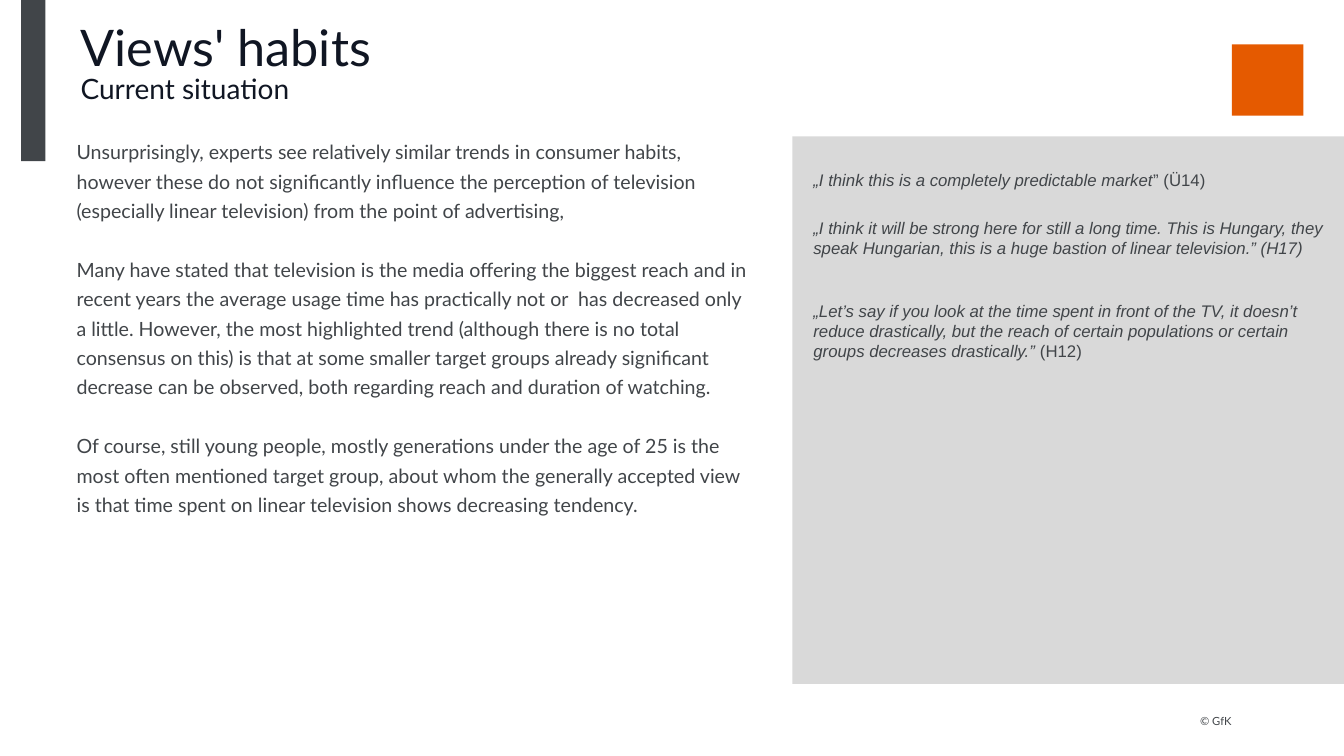
from pptx import Presentation
from pptx.dml.color import RGBColor
from pptx.enum.shapes import MSO_SHAPE as Shape
from pptx.enum.text import MSO_ANCHOR as Anchor, MSO_AUTO_SIZE as AutoSize, PP_ALIGN as Align
from pptx.oxml.ns import qn
from pptx.util import Pt

BODY = [
    "Unsurprisingly, experts see relatively similar trends in consumer habits, however these do not "
    "significantly influence the perception of television (especially linear television) from the "
    "point of advertising,",
    "Many have stated that television is the media offering the biggest reach and in recent years the "
    "average usage time has practically not or  has decreased only a little. However, the most "
    "highlighted trend (although there is no total consensus on this) is that at some smaller target "
    "groups already significant decrease can be observed, both regarding reach and duration of watching.",
    "Of course, still young people, mostly generations under the age of 25 is the most often mentioned "
    "target group, about whom the generally accepted view is that time spent on linear television shows "
    "decreasing tendency.",
]

# top, words in italics, upright ending
QUOTES = [
    (115.2, "„I think this is a completely predictable market", "” (Ü14)"),
    (149.8, "„I think it will be strong here for still a long time. This is Hungary, they speak "
            "Hungarian, this is a huge bastion of linear television.” (H17)", ""),
    (208.8, "„Let’s say if you look at the time spent in front of the TV, it doesn’t reduce drastically, "
            "but the reach of certain populations or certain groups decreases drastically.” ", "(H12)"),
]


def color(code):
    return RGBColor.from_string(code)


class SlideBuilder:
    heading_font, quote_font = "Lato", "Arial"
    ink, gray, panel, accent = "101623", "414549", "D9D9D9", "E55A00"

    def __init__(self, slide):
        self.slide = slide

    def place(self, shape, left, top, width, height):
        shape.left, shape.top = Pt(left), Pt(top)
        shape.width, shape.height = Pt(width), Pt(height)

    def prepare(self, shape, inset_top=0, anchor=Anchor.TOP):
        """Give the text frame its insets, wrapping and anchor."""
        frame = shape.text_frame
        frame.margin_left = frame.margin_right = frame.margin_bottom = 0
        frame.margin_top = Pt(inset_top)
        frame.word_wrap = True
        frame.auto_size = AutoSize.NONE
        frame.vertical_anchor = anchor
        return frame

    def style(self, paragraph, font, code, size=None, spacing=None, align=Align.LEFT):
        paragraph.alignment = align
        paragraph.line_spacing = spacing
        paragraph.font.name = font
        paragraph.font.color.rgb = color(code)
        paragraph.font.size = size and Pt(size)

    def rectangle(self, left, top, width, height, code):
        shape = self.slide.shapes.add_shape(Shape.RECTANGLE, Pt(left), Pt(top), Pt(width), Pt(height))
        shape.shadow.inherit = False
        shape.fill.solid()
        shape.fill.fore_color.rgb = color(code)
        shape.line.fill.background()

    def title(self, heading, subheading):
        shape = self.slide.shapes.title
        self.place(shape, 57.6, 18, 608.4, 38.9)
        paragraph = self.prepare(shape).paragraphs[0]
        self.style(paragraph, self.heading_font, self.ink, spacing=0.85)
        run = paragraph.add_run()
        run.text, run.font.size = heading, Pt(36)
        paragraph.add_line_break()
        run = paragraph.add_run()
        run.text, run.font.size = subheading, Pt(20)

    def body(self, texts):
        shape = self.slide.placeholders[1]
        self.place(shape, 54.7, 95.8, 479.5, 411.8)
        frame = self.prepare(shape)
        for index, text in enumerate(texts):
            paragraph = frame.paragraphs[0] if index == 0 else frame.add_paragraph()
            paragraph.text = text
            paragraph.space_before = Pt(21 if index else 0)
            properties = paragraph._p.get_or_add_pPr()
            properties.set("marL", "0")
            properties.set("indent", "0")
            properties.append(properties.makeelement(qn("a:buNone"), {}))
            self.style(paragraph, self.heading_font, self.gray, 14, 1.25)

    def text_box(self, left, top, width, height, **layout):
        shape = self.slide.shapes.add_textbox(Pt(left), Pt(top), Pt(width), Pt(height))
        return self.prepare(shape, **layout).paragraphs[0]

    def quote(self, top, words, ending):
        paragraph = self.text_box(581, top, 368.6, 54.7, inset_top=5.8)
        self.style(paragraph, self.quote_font, self.gray, 12)
        run = paragraph.add_run()
        run.text, run.font.italic = words, True
        if ending:
            paragraph.add_run().text = ending

    def copyright(self, text):
        paragraph = self.text_box(840.2, 509, 39.6, 10.8, anchor=Anchor.BOTTOM)
        paragraph.text = text
        self.style(paragraph, self.heading_font, self.gray, 8, 1.25, Align.RIGHT)


def main():
    presentation = Presentation()
    presentation.slide_width, presentation.slide_height = Pt(960), Pt(540)
    builder = SlideBuilder(presentation.slides.add_slide(presentation.slide_layouts[1]))
    builder.rectangle(880, 31.7, 51, 51, builder.accent)
    builder.rectangle(15.1, 0, 17.3, 115.2, builder.gray)
    builder.rectangle(566, 97.5, 394, 391, builder.panel)
    builder.title("Views' habits", "Current situation")
    builder.body(BODY)
    for quote in QUOTES:
        builder.quote(*quote)
    builder.copyright("© GfK")
    presentation.save("out.pptx")


if __name__ == "__main__":
    main()
